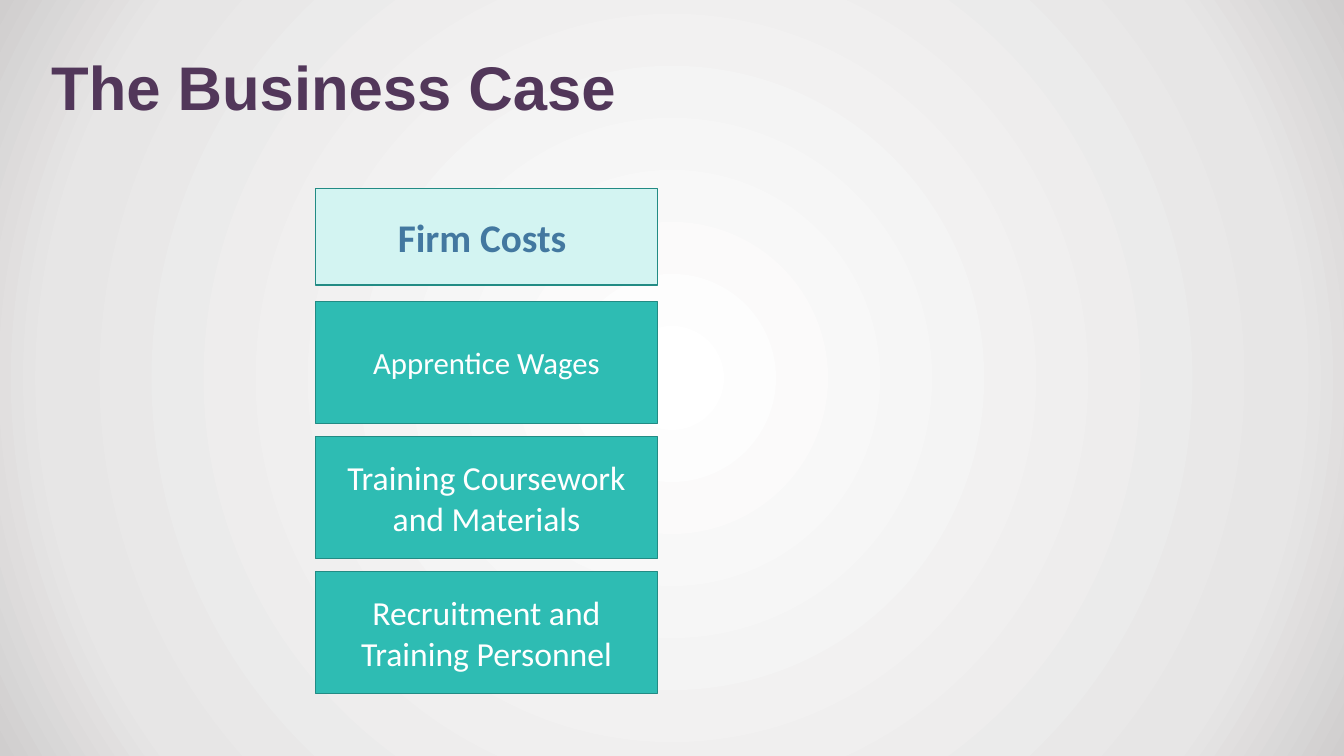
from dataclasses import dataclass

from lxml import etree
from pptx import Presentation
from pptx.dml.color import RGBColor as RGB
from pptx.enum.shapes import MSO_SHAPE as Shape
from pptx.enum.text import MSO_ANCHOR as Anchor, PP_ALIGN as Align
from pptx.oxml import parse_xml
from pptx.oxml.ns import nsdecls, qn
from pptx.util import Inches, Pt

WIDTH, HEIGHT = 13.33, 7.5


@dataclass(frozen=True)
class Theme:
    title_font: str = "Arial"
    body_font: str = "Calibri"
    title_color: str = "52375A"
    heading_color: str = "4378A0"
    heading_fill: str = "D3F4F2"
    cost_color: str = "FFFFFF"
    cost_fill: str = "2EBCB3"
    border: str = "228B84"
    backdrop: tuple = ((0, "FFFFFF"), (81, "E7E6E6"), (100, "D0CECE"))
    title_size: int = 44
    heading_size: int = 28
    cost_size: int = 24
    small_cost_size: int = 22


class SlideBuilder:
    def __init__(self, slide, theme):
        self.slide = slide
        self.theme = theme

    def rectangle(self, x, y, w, h):
        sp = self.slide.shapes.add_shape(
            Shape.RECTANGLE, Inches(x), Inches(y), Inches(w), Inches(h))
        sp.shadow.inherit = False
        return sp

    def backdrop(self):
        """Cover the slide with a gradient spreading from its centre."""
        sp = self.rectangle(0, 0, WIDTH, HEIGHT)
        sp.line.fill.background()
        sp.fill.gradient()
        grad = sp._element.spPr.find(qn("a:gradFill"))
        new = parse_xml(
            f'<a:gradFill {nsdecls("a")} rotWithShape="1"><a:gsLst/>'
            '<a:path path="circle">'
            '<a:fillToRect l="50000" t="50000" r="50000" b="50000"/>'
            '</a:path></a:gradFill>')
        stops = new.find(qn("a:gsLst"))
        for pos, color in self.theme.backdrop:
            gs = etree.SubElement(stops, qn("a:gs"), pos=str(pos * 1000))
            etree.SubElement(gs, qn("a:srgbClr"), val=color)
        grad.getparent().replace(grad, new)

    def set_text(self, sp, text, font, size, color, bold=False):
        tf = sp.text_frame
        tf.word_wrap = True
        tf.vertical_anchor = Anchor.MIDDLE
        p = tf.paragraphs[0]
        p.text = text
        p.font.name = font
        p.font.size = Pt(size)
        p.font.bold = bold
        p.font.color.rgb = RGB.from_string(color)
        return p

    def title(self, text, x, y, w, h):
        sp = self.slide.shapes.add_textbox(
            Inches(x), Inches(y), Inches(w), Inches(h))
        t = self.theme
        p = self.set_text(sp, text, t.title_font, t.title_size,
                          t.title_color, bold=True)
        p.line_spacing = 0.9

    def box(self, text, x, y, w, h, fill, color, size, bold=False):
        sp = self.rectangle(x, y, w, h)
        sp.fill.solid()
        sp.fill.fore_color.rgb = RGB.from_string(fill)
        sp.line.color.rgb = RGB.from_string(self.theme.border)
        sp.line.width = Pt(1)
        p = self.set_text(sp, text, self.theme.body_font, size, color, bold)
        p.alignment = Align.CENTER


def main():
    prs = Presentation()
    prs.slide_width, prs.slide_height = Inches(WIDTH), Inches(HEIGHT)
    t = Theme()
    s = SlideBuilder(prs.slides.add_slide(prs.slide_layouts[6]), t)

    s.backdrop()
    s.title("The Business Case", 0.41, 0.17, 11.5, 1.45)

    left, width = 3.13, 3.39
    s.box("Firm Costs ", left, 1.87, width, 0.96,
          t.heading_fill, t.heading_color, t.heading_size, bold=True)

    costs = [
        ("Apprentice Wages", t.small_cost_size),
        ("Training Coursework and Materials", t.cost_size),
        ("Recruitment and Training Personnel", t.cost_size),
    ]
    first_top, pitch, height = 2.99, 1.34, 1.21
    for i, (text, size) in enumerate(costs):
        s.box(text, left, first_top + i * pitch, width, height,
              t.cost_fill, t.cost_color, size)

    prs.save("out.pptx")


if __name__ == "__main__":
    main()
